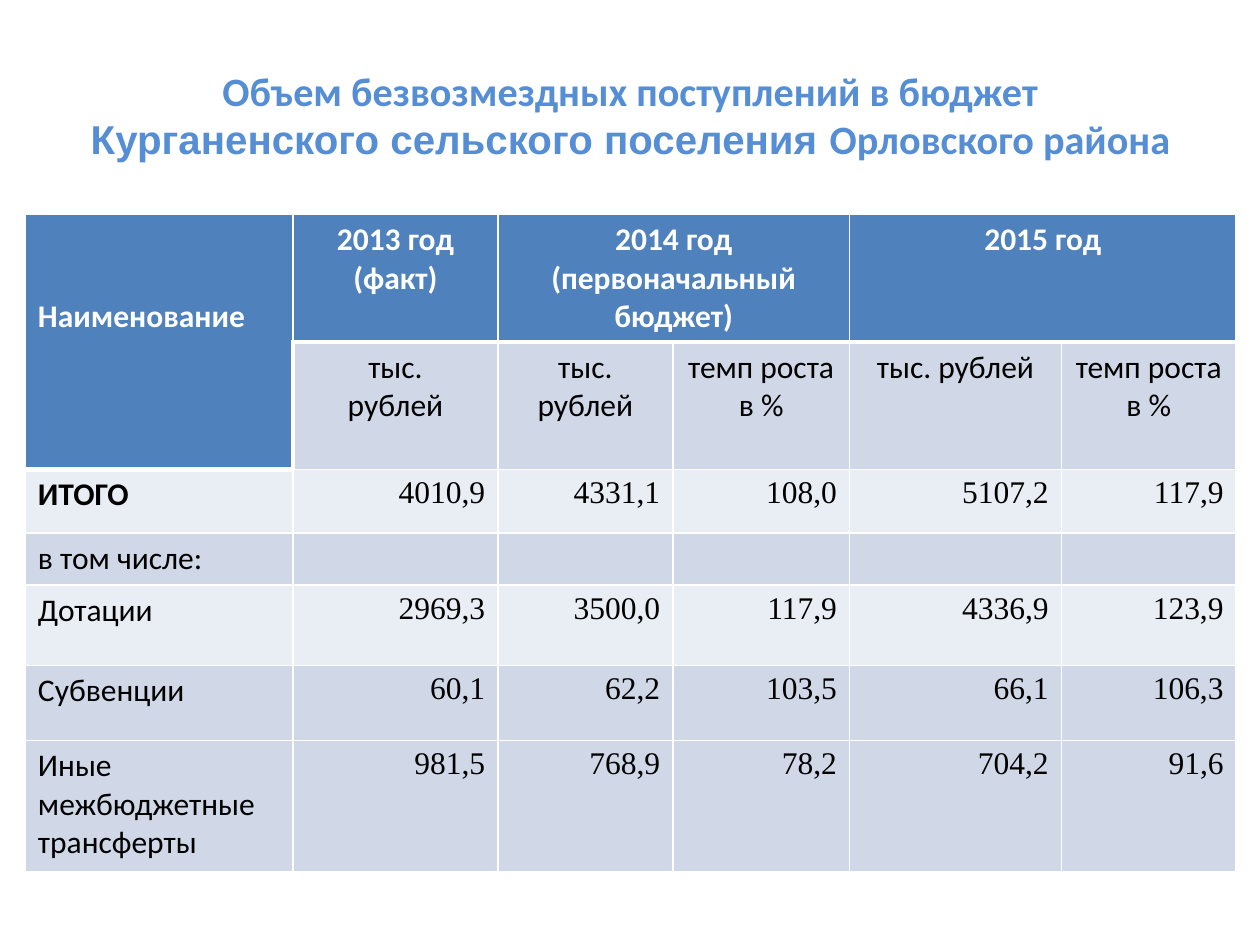
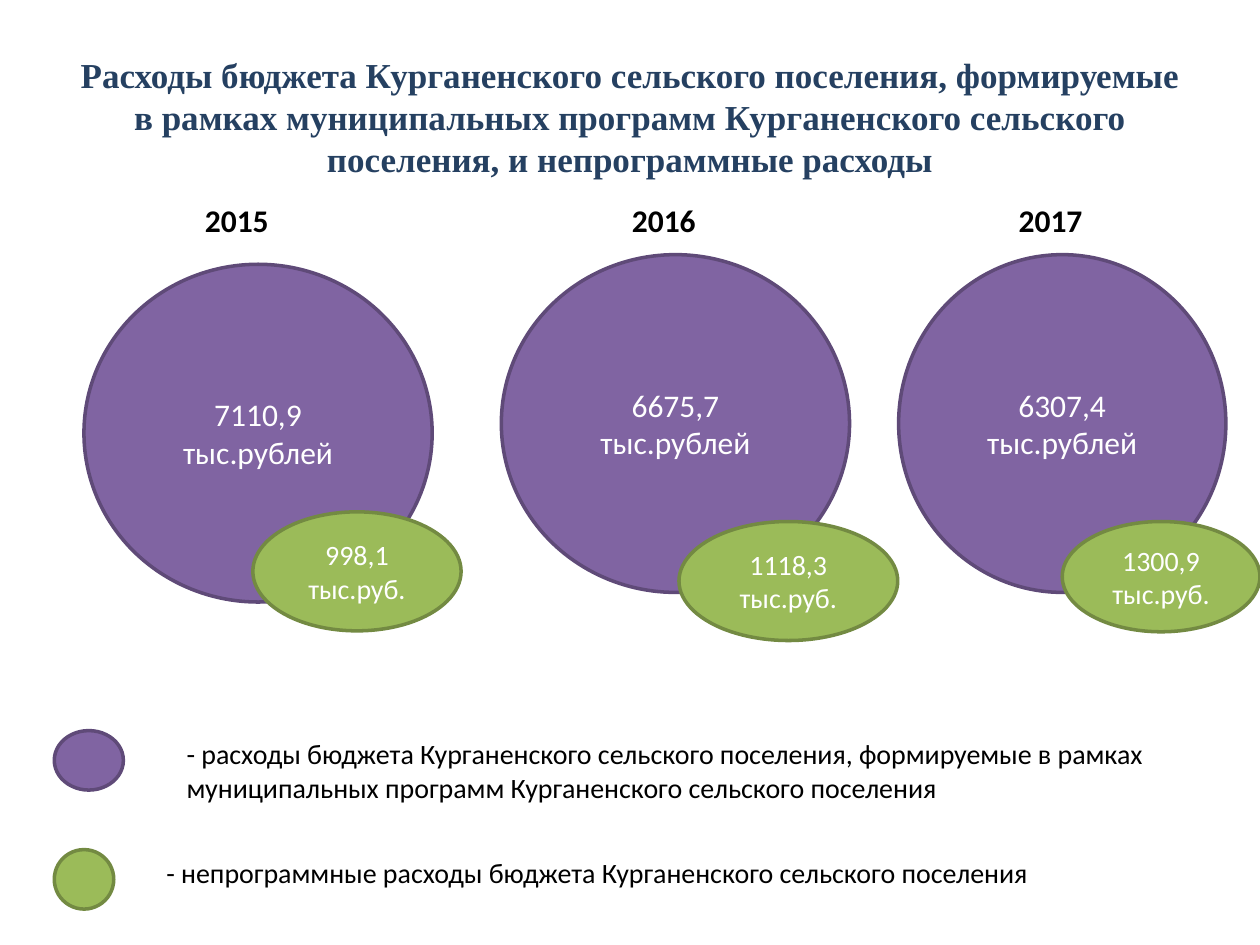
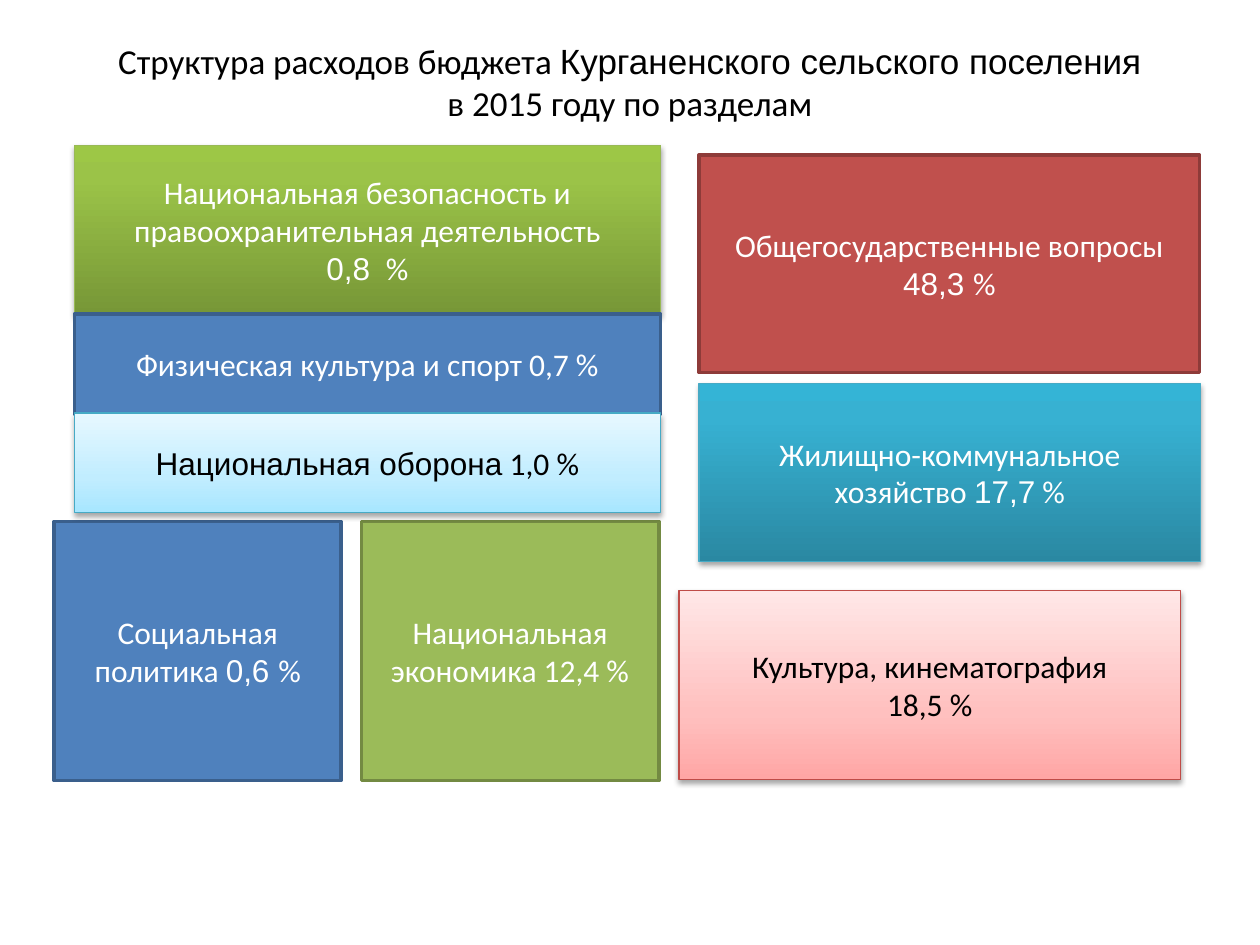
"""Build three slides on the budget of a rural settlement."""
import pptx
import pptx.dml.color
import pptx.enum.shapes
import pptx.enum.text
import pptx.oxml.ns
import pptx.util
from lxml import etree

Pt = pptx.util.Pt
RGBColor = pptx.dml.color.RGBColor
ALIGN = pptx.enum.text.PP_ALIGN
ANCHOR = pptx.enum.text.MSO_ANCHOR
SHAPES = pptx.enum.shapes.MSO_SHAPE
qn = pptx.oxml.ns.qn

WHITE = RGBColor(0xFF, 0xFF, 0xFF)
BLACK = RGBColor(0, 0, 0)
TITLE_BLUE = RGBColor(0x55, 0x8E, 0xD5)
NAVY = RGBColor(0x25, 0x40, 0x61)
BLUE = RGBColor(0x4F, 0x81, 0xBD)
BLUE_LINE = RGBColor(0x3A, 0x5F, 0x8C)
PURPLE = RGBColor(0x80, 0x64, 0xA2)
PURPLE_LINE = RGBColor(0x5F, 0x4A, 0x78)
GREEN = RGBColor(0x9B, 0xBB, 0x59)
GREEN_LINE = RGBColor(0x73, 0x8A, 0x42)
RED = RGBColor(0xC0, 0x50, 0x4D)
RED_LINE = RGBColor(0x8E, 0x3B, 0x39)
BAND_DARK = RGBColor(0xD0, 0xD8, 0xE8)
BAND_LIGHT = RGBColor(0xE9, 0xED, 0xF4)
CALIBRI, ARIAL, TIMES = "Calibri", "Arial", "Times New Roman"

STYLES = {
    "blue": (BLUE, BLUE_LINE, WHITE),
    "purple": (PURPLE, PURPLE_LINE, WHITE),
    "green": (GREEN, GREEN_LINE, WHITE),
    "red": (RED, RED_LINE, WHITE),
    "green fade": (((0, "779737"), (80, "9BC348"), (100, "9DC746")), RGBColor(0x98, 0xB9, 0x55), WHITE),
    "teal fade": (((0, "2A88A2"), (80, "37B1D2"), (100, "34B4D6")), RGBColor(0x46, 0xAA, 0xC5), WHITE),
    "pink fade": (((0, "FFA6A5"), (35, "FFC0BF"), (100, "FFE7E7")), RGBColor(0xBF, 0x4C, 0x48), BLACK),
    "sky fade": (((0, "A7E6FF"), (35, "C1EDFF"), (100, "E7F8FF")), RGBColor(0x46, 0xAA, 0xC5), BLACK),
}

INCOME_TITLE = [[("Объем безвозмездных поступлений в бюджет ", CALIBRI),
                 ("Курганенского сельского поселения ", ARIAL),
                 ("Орловского района", CALIBRI)]]
INCOME_COLUMNS = [153, 117, 100, 101, 121, 100]
INCOME_ROWS = [73, 69, 36.5, 29.5, 46, 43, 75]
INCOME_MERGES = [((0, 0), (1, 0)), ((0, 2), (0, 3)), ((0, 4), (0, 5))]
INCOME_FILLS = [BLUE, BAND_DARK, BAND_LIGHT, BAND_DARK, BAND_LIGHT, BAND_DARK, BAND_DARK]
INCOME_CELLS = [
    ["Наименование", "2013 год (факт)", "2014 год (первоначальный бюджет)", "", "2015 год", ""],
    ["", "тыс.\nрублей", "тыс. рублей", "темп роста в %", "тыс. рублей", "темп роста в %"],
    ["ИТОГО", "4010,9", "4331,1", "108,0", "5107,2", "117,9"],
    ["в том числе:", "", "", "", "", ""],
    ["Дотации", "2969,3", "3500,0", "117,9", "4336,9", "123,9"],
    ["Субвенции", "60,1", "62,2", "103,5", "66,1", "106,3"],
    ["Иные межбюджетные трансферты", "981,5", "768,9", "78,2", "704,2", "91,6"],
]
THICK_EDGES = {(1, 0, "B"), (2, 0, "T"), (1, 0, "R"), (1, 1, "L")}

PROGRAM_TITLE = [[("Расходы бюджета Курганенского сельского поселения, формируемые в рамках "
                   "муниципальных программ Курганенского сельского поселения, "
                   "и непрограммные расходы", TIMES)]]
YEARS = [("2015", 110), ("2016", 354), ("2017", 575)]
PROGRAM_CIRCLES = [
    ("7110,9", (48, 151, 199, 193)),
    ("6675,7", (286.5, 145.5, 199, 193)),
    ("6307,4", (513.5, 145.5, 187, 193)),
]
OTHER_CIRCLES = [
    ("998,1", (144.5, 292.5, 119, 68)),
    ("1118,3", (388, 298, 125, 68)),
    ("1300,9", (607, 298, 113, 63)),
]
LEGEND = [
    ("purple", (31, 417.5, 39.5, 34), (99.5, 417.5, 572.5, 46),
     "- расходы бюджета Курганенского сельского поселения, формируемые в рамках "
     "муниципальных программ Курганенского сельского поселения"),
    ("green", (31, 485.5, 34, 34), (88, 485.5, 572.5, 27),
     "- непрограммные расходы бюджета Курганенского сельского поселения"),
]

STRUCTURE_TITLE = [[("Структура расходов бюджета ", CALIBRI), ("Курганенского сельского поселения", ARIAL)],
                   [("в 2015 году по разделам", CALIBRI)]]
SECTIONS = [
    ("blue", (31, 298, 164, 148),
     [[("Социальная политика ", CALIBRI), ("0,6 ", ARIAL), ("%", CALIBRI)]]),
    ("green", (206.5, 298, 170, 148), [[("Национальная экономика 12,4 %", CALIBRI)]]),
    ("green fade", (42.5, 83, 335, 96.5),
     [[("Национальная безопасность и правоохранительная деятельность", CALIBRI)],
      [("0,8 ", ARIAL), (" %", CALIBRI)]]),
    ("red", (399.5, 88.5, 286, 124.5),
     [[("Общегосударственные вопросы", CALIBRI)], [("48,3 ", ARIAL), ("%", CALIBRI)]]),
    ("teal fade", (399.5, 219, 286.5, 102),
     [[("Жилищно-коммунальное хозяйство ", CALIBRI), ("17,7", ARIAL), (" %", CALIBRI)]]),
    ("pink fade", (388, 337.5, 286.5, 108),
     [[("Культура, кинематография", CALIBRI)], [("18,5 %", CALIBRI)]]),
    ("blue", (42.5, 179.5, 335, 57), [[("Физическая культура и спорт 0,7 %", CALIBRI)]]),
    ("sky fade", (42.5, 236, 335, 57),
     [[("Национальная оборона", ARIAL), (" 1,0 %", CALIBRI)]]),
]


def format_run(run, font, size, color, bold=False):
    run.font.name = font
    run.font.size = Pt(size)
    run.font.color.rgb = color
    run.font.bold = bold


def write_text(text_frame, lines, size, color, bold=False, align=ALIGN.CENTER, anchor=ANCHOR.MIDDLE):
    text_frame.word_wrap = True
    text_frame.vertical_anchor = anchor
    for index, line in enumerate(lines):
        paragraph = text_frame.add_paragraph() if index else text_frame.paragraphs[0]
        paragraph.alignment = align
        for text, font in line:
            run = paragraph.add_run()
            run.text = text
            format_run(run, font, size, color, bold)


def add_text(slide, box, lines, size, color, **options):
    text_box = slide.shapes.add_textbox(*map(Pt, box))
    write_text(text_box.text_frame, lines, size, color, **options)


def add_color(parent, value):
    return etree.SubElement(parent, qn("a:srgbClr"), val=value)


def fill_with_fade(shape, stops):
    shape.fill.gradient()
    shape.fill.gradient_angle = 90
    stop_list = shape.element.spPr.find(".//" + qn("a:gsLst"))
    stop_list.clear()
    for position, value in stops:
        add_color(etree.SubElement(stop_list, qn("a:gs"), pos=str(position * 1000)), value)
    effects = shape.element.spPr.find(qn("a:effectLst"))
    shadow = etree.SubElement(effects, qn("a:outerShdw"), blurRad=str(Pt(3.1)), dist=str(Pt(1.8)),
                              dir="5400000", rotWithShape="0")
    etree.SubElement(add_color(shadow, "000000"), qn("a:alpha"), val="35000")


def add_figure(slide, kind, style, box, lines=(), size=18):
    fill, line, text_color = STYLES[style]
    shape = slide.shapes.add_shape(kind, *map(Pt, box))
    shape.shadow.inherit = False
    shape.line.color.rgb = line
    if isinstance(fill, RGBColor):
        shape.fill.solid()
        shape.fill.fore_color.rgb = fill
        shape.line.width = Pt(2)
    else:
        shape.line.width = Pt(0.75)
        fill_with_fade(shape, fill)
    write_text(shape.text_frame, lines, size, text_color)


def add_borders(cell, row, column):
    properties = cell._tc.get_or_add_tcPr()
    for side in "LRTB":
        thick = (row, side) in {(0, "B"), (1, "T")} or (row, column, side) in THICK_EDGES
        border = etree.SubElement(properties, qn("a:ln" + side), w=str(Pt(3 if thick else 1)))
        add_color(etree.SubElement(border, qn("a:solidFill")), "FFFFFF")


def format_cell(cell, row, column):
    add_borders(cell, row, column)
    cell.fill.solid()
    cell.fill.fore_color.rgb = BLUE if (row, column) == (1, 0) else INCOME_FILLS[row]
    is_number = row > 1 and column > 0
    for paragraph in cell.text_frame.paragraphs:
        if column:
            paragraph.alignment = ALIGN.RIGHT if is_number else ALIGN.CENTER
        for run in paragraph.runs:
            format_run(run, TIMES if is_number else CALIBRI, 18, BLACK if row else WHITE,
                       row == 0 or (row, column) == (2, 0))


def build_income(slide):
    add_text(slide, (36.5, 26, 648, 79), INCOME_TITLE, 23, TITLE_BLUE, bold=True)
    frame = slide.shapes.add_table(len(INCOME_ROWS), len(INCOME_COLUMNS), Pt(14.5), Pt(122.5),
                                   Pt(sum(INCOME_COLUMNS)), Pt(sum(INCOME_ROWS)))
    table = frame.table
    for column, width in zip(table.columns, INCOME_COLUMNS):
        column.width = Pt(width)
    for row, height in zip(table.rows, INCOME_ROWS):
        row.height = Pt(height)
    for row, texts in enumerate(INCOME_CELLS):
        for column, text in enumerate(texts):
            cell = table.cell(row, column)
            cell.text_frame.text = text
            format_cell(cell, row, column)
    for first, last in INCOME_MERGES:
        table.cell(*first).merge(table.cell(*last))
    table.cell(0, 0).margin_top = Pt(47.5)


def build_programs(slide):
    add_text(slide, (36, 21.5, 648, 90), PROGRAM_TITLE, 20, NAVY, bold=True)
    for circles, style, unit, size in ((PROGRAM_CIRCLES, "purple", "тыс.рублей", 18),
                                       (OTHER_CIRCLES, "green", "тыс.руб.", 16)):
        for amount, box in circles:
            lines = [[(amount, CALIBRI)], [(unit, CALIBRI)]]
            add_figure(slide, SHAPES.OVAL, style, box, lines, size)
    for year, left in YEARS:
        add_text(slide, (left, 111.5, 57, 29), [[(year, CALIBRI)]], 18, BLACK,
                 bold=True, align=ALIGN.LEFT, anchor=ANCHOR.TOP)
    for style, marker_box, text_box, text in LEGEND:
        add_figure(slide, SHAPES.OVAL, style, marker_box)
        add_text(slide, text_box, [[(text, CALIBRI)]], 16, BLACK, align=ALIGN.LEFT, anchor=ANCHOR.TOP)


def build_structure(slide):
    add_text(slide, (36, 21.5, 648, 50), STRUCTURE_TITLE, 20, BLACK)
    for style, box, lines in SECTIONS:
        add_figure(slide, SHAPES.RECTANGLE, style, box, lines)


def main():
    presentation = pptx.Presentation()
    presentation.slide_width, presentation.slide_height = Pt(720), Pt(540)
    for build in (build_income, build_programs, build_structure):
        build(presentation.slides.add_slide(presentation.slide_layouts[6]))
    presentation.save("out.pptx")


if __name__ == "__main__":
    main()
